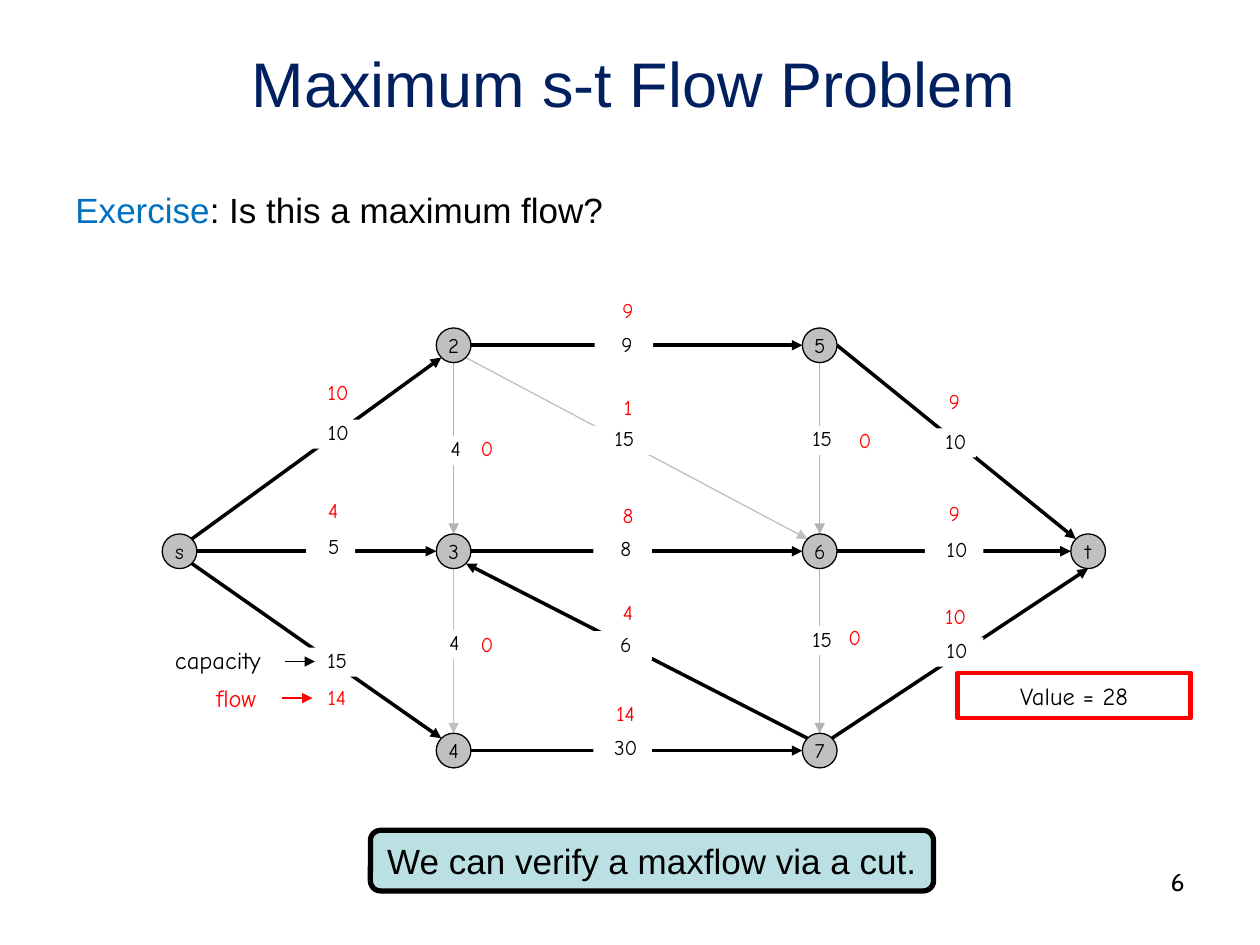
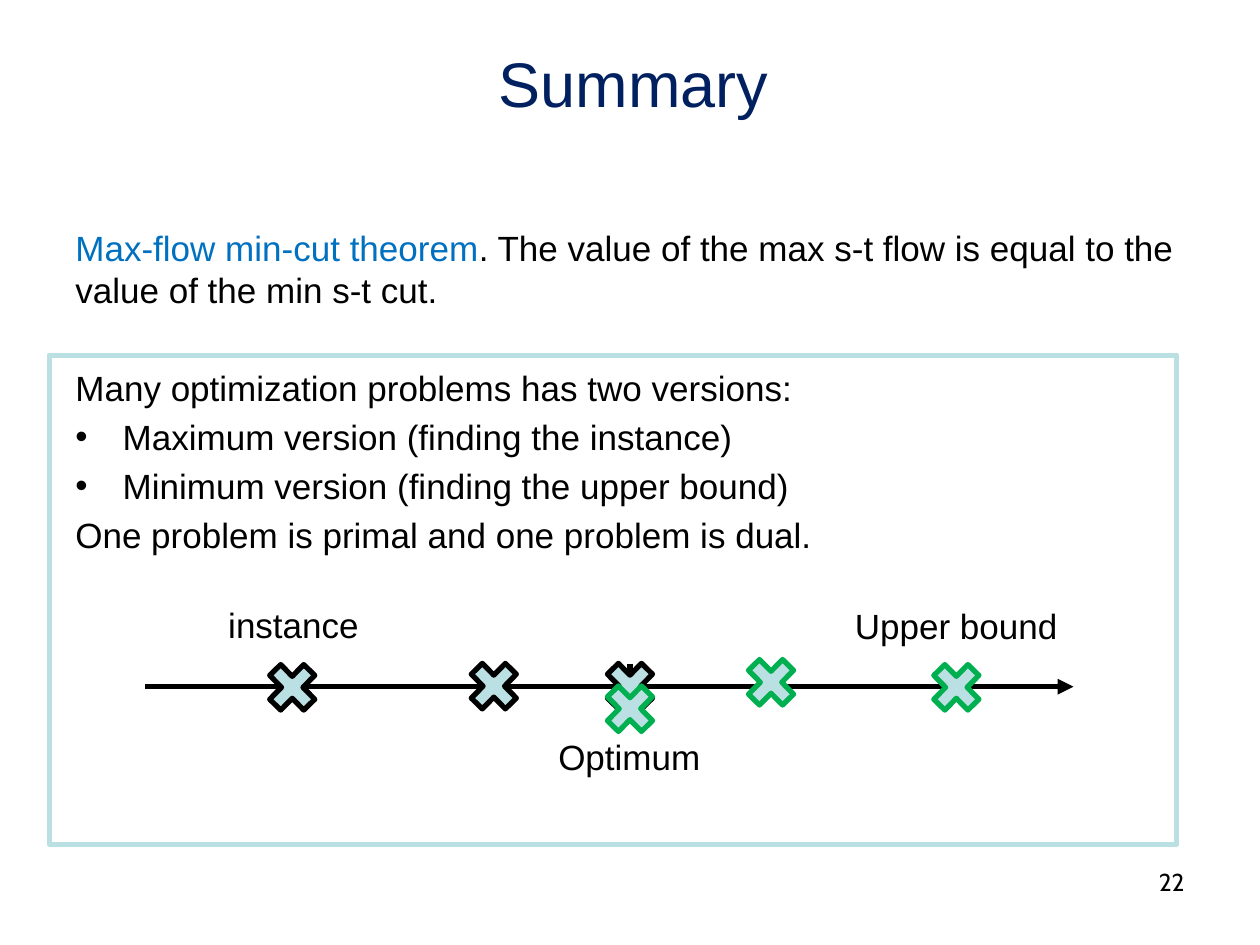
from dataclasses import dataclass
from typing import Optional

from lxml.etree import SubElement
from pptx import Presentation
from pptx.dml.color import RGBColor
from pptx.enum.shapes import MSO_CONNECTOR, MSO_SHAPE
from pptx.enum.text import MSO_ANCHOR, PP_ALIGN
from pptx.oxml.ns import qn
from pptx.util import Pt

COLORS = {
    "title": "002060",
    "accent": "0070C0",
    "black": "000000",
    "white": "FFFFFF",
    "flow": "FF0000",
    "node": "C0C0C0",
    "idle": "B3B3B3",
    "teal": "BBE0E3",
    "bound": "00B050",
}
SANS = "Arial"
HAND = "Comic Neue"
NUMBER = "Cabin"
NODE_SIZE = 19.8
DIAGONAL = 0.71


@dataclass(frozen=True)
class Box:
    left: float
    top: float
    width: float
    height: float


@dataclass(frozen=True)
class Span:
    text: str
    size: float = 20
    color: str = "black"
    font: str = SANS


@dataclass(frozen=True)
class Para:
    spans: tuple[Span, ...]
    align: PP_ALIGN = PP_ALIGN.LEFT
    before: float = 0
    bullet: bool = False


@dataclass(frozen=True)
class Edge:
    start: str
    start_side: str
    end: str
    end_side: str
    capacity: str
    capacity_at: tuple[float, float]
    flow: str
    flow_at: tuple[float, float]
    color: str = "black"
    capacity_width: float = 33.5
    capacity_indent: float = 3.5


@dataclass(frozen=True)
class Marker:
    left: float
    top: float
    color: str


SIDES = {
    "top": (0, -1),
    "bottom": (0, 1),
    "left": (-1, 0),
    "right": (1, 0),
    "top left": (-DIAGONAL, -DIAGONAL),
    "top right": (DIAGONAL, -DIAGONAL),
    "bottom left": (-DIAGONAL, DIAGONAL),
    "bottom right": (DIAGONAL, DIAGONAL),
}
COLUMNS = (102.6, 259.2, 468.4, 621.8)
ROWS = (197.3, 315, 428.9)
NODES = {
    "s": (COLUMNS[0], ROWS[1]),
    "2": (COLUMNS[1], ROWS[0]),
    "3": (COLUMNS[1], ROWS[1]),
    "4": (COLUMNS[1], ROWS[2]),
    "5": (COLUMNS[2], ROWS[0]),
    "6": (COLUMNS[2], ROWS[1]),
    "7": (COLUMNS[2], ROWS[2]),
    "t": (COLUMNS[3], ROWS[1]),
}
EDGES = (
    Edge("s", "top right", "2", "bottom left", "10", (171.4, 239.8), "10", (180, 216.7), capacity_indent=10.5),
    Edge("s", "right", "3", "left", "5", (175, 304.6), "4", (177.1, 284.4), capacity_width=28),
    Edge("s", "bottom right", "4", "top left", "15", (174.2, 370.1), "14", (179.3, 391)),
    Edge("2", "right", "5", "left", "9", (339.8, 189.4), "9", (345.6, 169.9)),
    Edge("2", "bottom right", "6", "top left", "15", (338.4, 243.4), "1", (345.6, 225.4), "node"),
    Edge("2", "bottom", "3", "top", "4", (241.9, 249.1), "0", (265, 249.1), "idle"),
    Edge("3", "right", "6", "left", "8", (339.1, 306), "8", (345.6, 287.3)),
    Edge("3", "bottom", "4", "top", "4", (241.2, 360), "0", (265, 360.7), "node"),
    Edge("7", "top left", "3", "bottom right", "6", (339.1, 360.7), "4", (345.6, 342.7)),
    Edge("4", "right", "7", "left", "30", (339.1, 419.8), "14", (344.2, 400.3)),
    Edge("5", "bottom", "6", "top", "15", (451.4, 243.4), "0", (481, 244.1), "idle"),
    Edge("6", "bottom", "7", "top", "15", (451.4, 357.8), "0", (475.2, 357.1), "idle"),
    Edge("5", "right", "t", "top left", "10", (524.2, 244.8), "9", (532.1, 221.8), capacity_indent=10.5),
    Edge("6", "right", "t", "left", "10", (528.5, 306.7), "9", (532.1, 285.8)),
    Edge("7", "top right", "t", "bottom", "10", (528.5, 364.3), "10", (532.8, 344.9)),
)
MARKERS = (
    Marker(148.3, 373.7, "black"),
    Marker(527.8, 373.7, "bound"),
    Marker(263.5, 373, "black"),
    Marker(421.9, 370.8, "bound"),
    Marker(341.3, 373, "black"),
    Marker(341.3, 385.9, "bound"),
)


def rgb(name: str) -> RGBColor:
    return RGBColor.from_string(COLORS[name])


def write(shape, paras: tuple[Para, ...], insets=(7.2, 3.6, 7.2, 3.6)) -> None:
    frame = shape.text_frame
    frame.word_wrap = True
    frame.margin_left, frame.margin_top, frame.margin_right, frame.margin_bottom = map(Pt, insets)
    for index, para in enumerate(paras):
        paragraph = frame.add_paragraph() if index else frame.paragraphs[0]
        paragraph.alignment = para.align
        paragraph.space_before = Pt(para.before)
        if para.bullet:
            properties = paragraph._p.get_or_add_pPr()
            properties.set("marL", str(Pt(27)))
            properties.set("indent", str(Pt(-27)))
            SubElement(properties, qn("a:buFont")).set("typeface", SANS)
            SubElement(properties, qn("a:buChar")).set("char", "•")
        for span in para.spans:
            run = paragraph.add_run()
            run.text = span.text
            run.font.name = span.font
            run.font.size = Pt(span.size)
            run.font.color.rgb = rgb(span.color)


def add_text(page, box: Box, *paras: Para, insets=(7.2, 3.6, 7.2, 3.6)):
    shape = page.shapes.add_textbox(Pt(box.left), Pt(box.top), Pt(box.width), Pt(box.height))
    write(shape, paras, insets)
    return shape


def add_outline(page, kind, box: Box, fill: Optional[str], line: str, weight: float):
    shape = page.shapes.add_shape(kind, Pt(box.left), Pt(box.top), Pt(box.width), Pt(box.height))
    shape.shadow.inherit = False
    if fill:
        shape.fill.solid()
        shape.fill.fore_color.rgb = rgb(fill)
    else:
        shape.fill.background()
    shape.line.color.rgb = rgb(line)
    shape.line.width = Pt(weight)
    return shape


def add_line(page, start, end, color: str, weight: float, arrow: bool = True) -> None:
    line = page.shapes.add_connector(MSO_CONNECTOR.STRAIGHT, *map(Pt, (*start, *end)))
    line.line.color.rgb = rgb(color)
    line.line.width = Pt(weight)
    if arrow:
        SubElement(line.line._get_or_add_ln(), qn("a:tailEnd")).set("type", "triangle")
    SubElement(line._element.spPr, qn("a:effectLst"))


def centered(text: str, size: float, color: str = "black", font: str = SANS) -> Para:
    return Para((Span(text, size, color, font),), PP_ALIGN.CENTER)


def add_page(deck, title: str, number: str):
    page = deck.slides.add_slide(deck.slide_layouts[6])
    add_text(page, Box(20, 21.6, 684, 90), centered(title, 36, "title"))
    add_text(page, Box(516.2, 491.8, 167.8, 37.4), Para((Span(number, 14, font=NUMBER),), PP_ALIGN.RIGHT))
    return page


def site(node: str, side: str) -> tuple[float, float]:
    x, y = NODES[node]
    across, down = SIDES[side]
    return x + across * NODE_SIZE / 2, y + down * NODE_SIZE / 2


def add_network(page) -> None:
    for edge in EDGES:
        weight = 2 if edge.color == "black" else 0.75
        add_line(page, site(edge.start, edge.start_side), site(edge.end, edge.end_side), edge.color, weight)
    for name, (x, y) in NODES.items():
        box = Box(x - NODE_SIZE / 2, y - NODE_SIZE / 2, NODE_SIZE, NODE_SIZE)
        node = add_outline(page, MSO_SHAPE.OVAL, box, "node", "black", 0.75)
        write(node, (centered(name, 12, font=HAND),), (0, 0, 0, 0))
    for edge in EDGES:
        label = add_text(page, Box(*edge.capacity_at, edge.capacity_width, 16.6),
                         centered(edge.capacity, 12, font=HAND), insets=(edge.capacity_indent, 0, 0, 0))
        label.fill.solid()
        label.fill.fore_color.rgb = rgb("white")
    for edge in EDGES:
        add_text(page, Box(*edge.flow_at, 26.6, 13.7),
                 centered(edge.flow, 12, "flow", HAND), insets=(0, 0, 0, 0))


def build_flow_page(deck) -> None:
    page = add_page(deck, "Maximum s-t Flow Problem", "6")
    add_text(page, Box(36, 104.4, 648, 378),
             Para((Span("Exercise", color="accent"), Span(": Is this a maximum flow?"))))
    add_network(page)
    add_text(page, Box(92.9, 365, 68.4, 26.6), Para((Span("capacity", 14, font=HAND),)))
    add_text(page, Box(116.6, 386.6, 42.5, 24.5), Para((Span("flow", 14, "flow", HAND),)))
    add_line(page, (162.7, 378), (180, 378), "black", 0.75)
    add_line(page, (161.3, 398.9), (178.6, 398.9), "flow", 0.75)
    value = add_outline(page, MSO_SHAPE.RECTANGLE, Box(547.2, 384.5, 133.2, 25.9), None, "flow", 2.5)
    write(value, (centered("Value = 28", 14, font=HAND),))
    banner = add_outline(page, MSO_SHAPE.ROUNDED_RECTANGLE, Box(211.7, 474.5, 321.8, 34.6), "teal", "black", 3)
    write(banner, (centered("We can verify a maxflow via a cut.", 20),))
    banner.text_frame.vertical_anchor = MSO_ANCHOR.MIDDLE


def build_summary_page(deck) -> None:
    page = add_page(deck, "Summary", "22")
    add_text(
        page, Box(36, 126, 648, 356.4),
        Para((Span("Max-flow min-cut theorem", color="accent"),
              Span(". The value of the max s-t flow is equal to the value of the min s-t cut."))),
        Para((Span("Many optimization problems has two versions:"),), before=32),
        Para((Span("Maximum version (finding the instance)"),), before=4, bullet=True),
        Para((Span("Minimum version (finding the upper bound)"),), before=4, bullet=True),
        Para((Span("One problem is primal and one problem is dual."),), before=4),
    )
    add_line(page, (82.8, 392.4), (613.4, 392.4), "black", 3)
    add_line(page, (360, 379.4), (360, 408.2), "black", 3, arrow=False)
    add_outline(page, MSO_SHAPE.RECTANGLE, Box(28.1, 203, 644.4, 279.4), None, "teal", 3)
    add_text(page, Box(305.3, 416.9, 108.7, 31.7), centered("Optimum", 20))
    add_text(page, Box(123.1, 341.3, 89.3, 31.7), centered("instance", 20))
    add_text(page, Box(479.5, 342, 133.9, 31.7), centered("Upper bound", 20))
    for marker in MARKERS:
        add_outline(page, MSO_SHAPE.MATH_MULTIPLY, Box(marker.left, marker.top, 37.4, 38.2),
                    "teal", marker.color, 3)


def main() -> None:
    deck = Presentation()
    deck.slide_width, deck.slide_height = Pt(720), Pt(540)
    build_flow_page(deck)
    build_summary_page(deck)
    deck.save("out.pptx")


if __name__ == "__main__":
    main()
